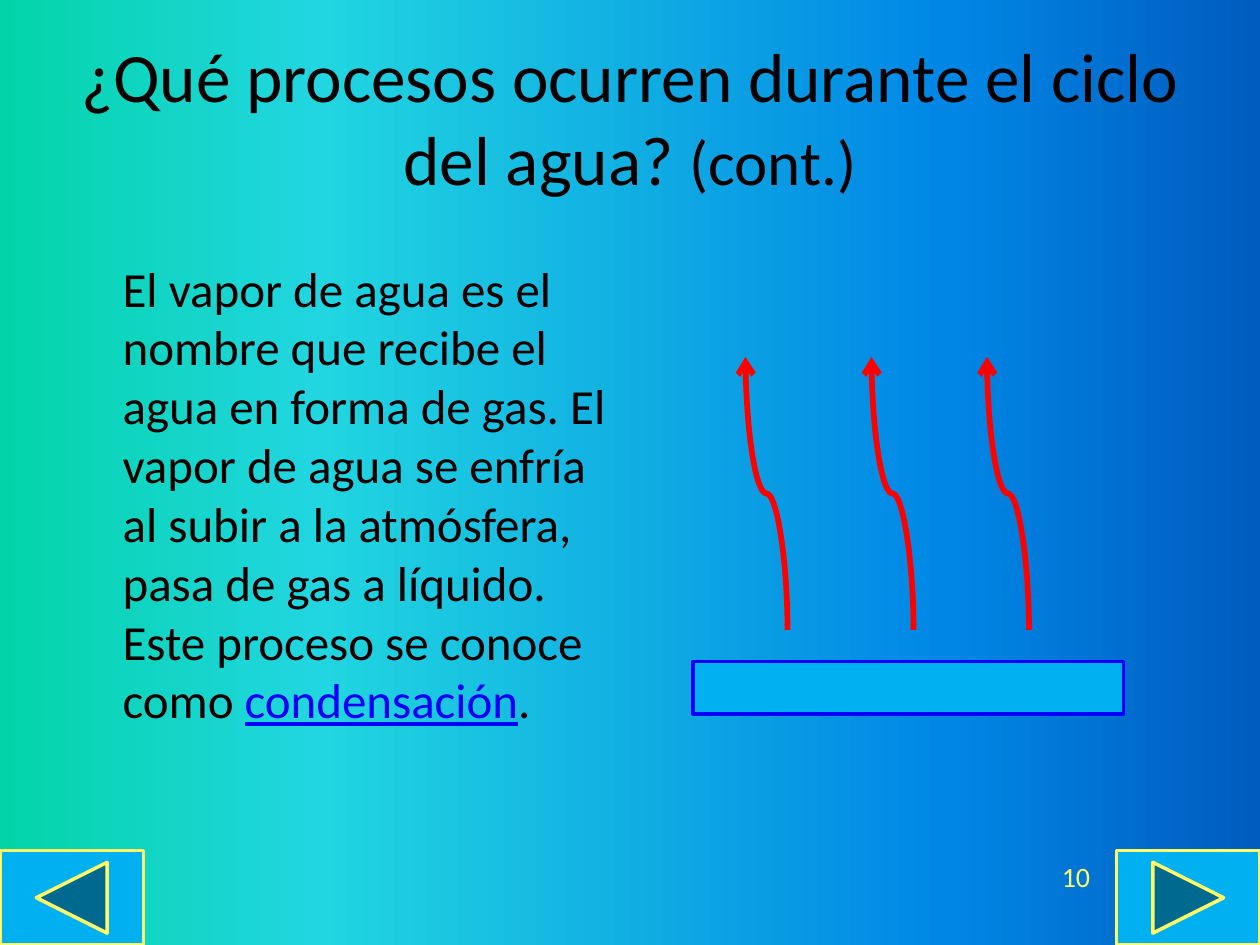
from lxml import etree
from pptx import Presentation
from pptx.dml.color import RGBColor
from pptx.enum.shapes import MSO_CONNECTOR as Connector, MSO_SHAPE as Shape
from pptx.enum.text import MSO_ANCHOR as Anchor, PP_ALIGN as Align
from pptx.oxml.ns import qn
from pptx.util import Pt

BLACK = RGBColor(0x00, 0x00, 0x00)
BLUE = RGBColor(0x00, 0x00, 0xFF)
RED = RGBColor(0xFF, 0x00, 0x00)
YELLOW = RGBColor(0xFF, 0xFF, 0x66)
WATER = RGBColor(0x00, 0xB0, 0xF0)
BACKGROUND = [
    (0, RGBColor(0x03, 0xD4, 0xA8)),
    (25, RGBColor(0x21, 0xD6, 0xE0)),
    (75, RGBColor(0x00, 0x87, 0xE6)),
    (100, RGBColor(0x00, 0x5C, 0xBF)),
]


def add_text(page, spans, left, top, width, height, align=Align.LEFT,
             anchor=Anchor.TOP, margin=0, before=0):
    """Add one paragraph; each span is (text, size, colour, underline)."""
    frame = page.shapes.add_textbox(Pt(left), Pt(top), Pt(width), Pt(height)).text_frame
    frame.word_wrap = True
    frame.vertical_anchor = anchor
    para = frame.paragraphs[0]
    para.alignment = align
    para.space_before = Pt(before)
    if margin:
        properties = para._p.get_or_add_pPr()
        properties.set("marL", str(Pt(margin)))
        properties.set("indent", "0")
    for text, size, color, underline in spans:
        span = para.add_run()
        span.text = text
        span.font.name = "Calibri"
        span.font.size = Pt(size)
        span.font.color.rgb = color
        span.font.underline = underline


deck = Presentation()
deck.slide_width, deck.slide_height = Pt(720), Pt(540)
page = deck.slides.add_slide(deck.slide_layouts[6])

# Background gradient, left to right
fill = page.background.fill
fill.gradient()
fill.gradient_angle = 0
stops = page.background._cSld.find(".//" + qn("a:gsLst"))
for stop in list(stops):
    stops.remove(stop)
for percent, color in BACKGROUND:
    stop = etree.SubElement(stops, qn("a:gs"), pos=str(percent * 1000))
    etree.SubElement(stop, qn("a:srgbClr"), val=str(color))

# Title and body
add_text(page, [("¿Qué procesos ocurren durante el ciclo del agua? ", 39.6, BLACK, False),
                ("(cont.)", 36, BLACK, False)],
         36, 21.6, 648, 90, align=Align.CENTER, anchor=Anchor.MIDDLE)
add_text(page, [("El vapor de agua es el nombre que recibe el agua en forma de gas. "
                 "El vapor de agua se enfría al subir a la atmósfera, pasa de gas a "
                 "líquido. Este proceso se conoce como ", 28, BLACK, False),
                ("condensación", 28, BLUE, True),
                (".", 28, BLACK, False)],
         36, 144, 318, 318, margin=27, before=5.6)

# Rising vapour: curves laid out flat, then turned upright
for left in (360, 432, 498):
    vapour = page.shapes.add_connector(Connector.CURVE, Pt(left), Pt(294),
                                       Pt(left + 156), Pt(270))
    vapour.line.color.rgb = RED
    vapour.line.width = Pt(3.25)
    properties = vapour._element.spPr
    properties.find(qn("a:xfrm")).set("rot", str(270 * 60000))
    etree.SubElement(properties.find(qn("a:ln")), qn("a:tailEnd"), type="arrow")
    etree.SubElement(properties, qn("a:effectLst"))

# Water surface and navigation buttons
for kind, left, top, width, height, outline in [
    (Shape.RECTANGLE, 396, 378, 246, 30, BLUE),
    (Shape.ACTION_BUTTON_BACK_OR_PREVIOUS, 0, 486, 82, 54, YELLOW),
    (Shape.ACTION_BUTTON_FORWARD_OR_NEXT, 638, 486, 82, 54, YELLOW),
]:
    box = page.shapes.add_shape(kind, Pt(left), Pt(top), Pt(width), Pt(height))
    box.shadow.inherit = False
    box.fill.solid()
    box.fill.fore_color.rgb = WATER
    box.line.color.rgb = outline
    box.line.width = Pt(2)

# Page number
add_text(page, [("10", 16, YELLOW, False)], 462, 486, 168, 29,
         align=Align.RIGHT, anchor=Anchor.MIDDLE)

deck.save("out.pptx")
